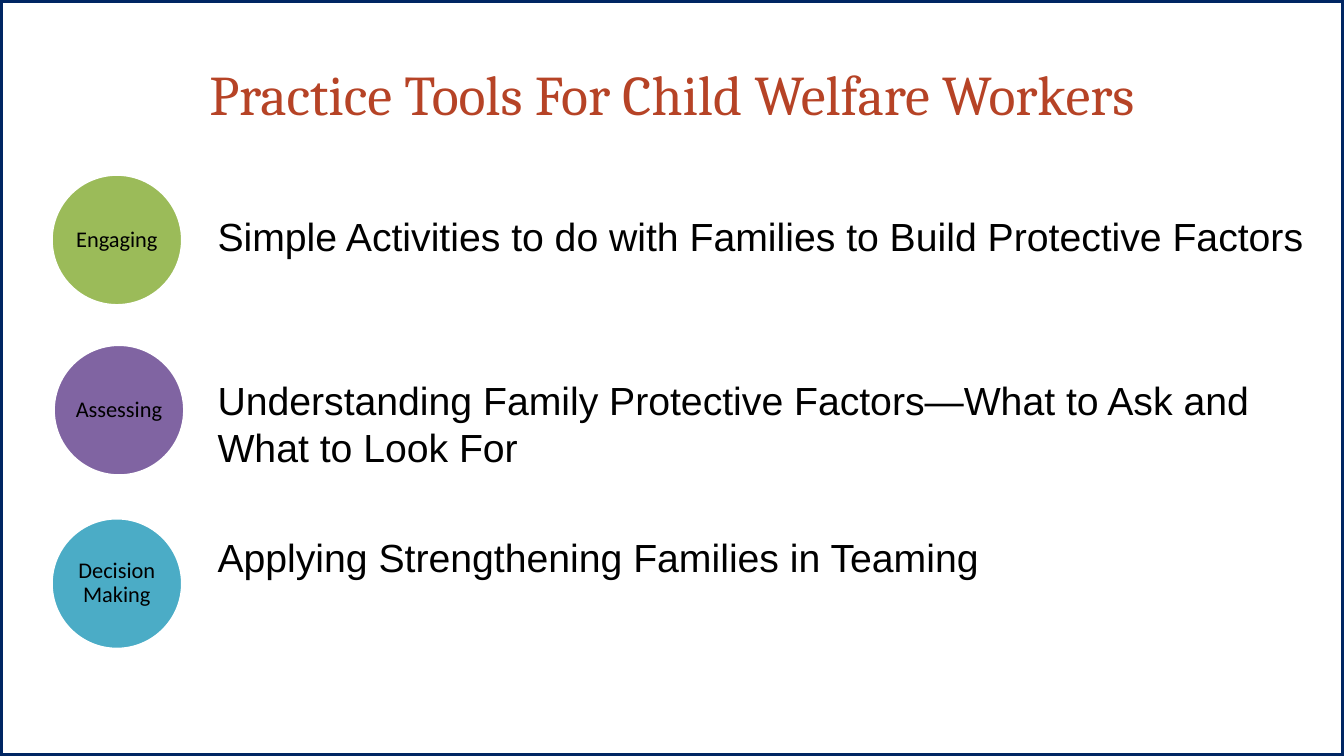
from dataclasses import dataclass
from pptx import Presentation
from pptx.util import Pt
from pptx.dml.color import RGBColor
from pptx.enum.shapes import MSO_SHAPE
from pptx.enum.text import MSO_ANCHOR, PP_ALIGN

RECT, OVAL = MSO_SHAPE.RECTANGLE, MSO_SHAPE.OVAL
TOP, MIDDLE = MSO_ANCHOR.TOP, MSO_ANCHOR.MIDDLE
LEFT, CENTER = PP_ALIGN.LEFT, PP_ALIGN.CENTER


@dataclass
class Theme:
    navy: str = "002663"
    rust: str = "B64326"
    ink: str = "000000"
    white: str = "FFFFFF"
    green: str = "9BBB59"
    purple: str = "8064A2"
    teal: str = "4BACC6"
    title: int = 40
    body: int = 28
    label: int = 16


theme = Theme()
WIDE, HIGH = 960, 540


def write(shape, text, font, size, color=theme.ink, align=LEFT, anchor=TOP,
          inset=(7.2, 3.6), space=1.0):
    frame = shape.text_frame
    frame.word_wrap = True
    frame.vertical_anchor = anchor
    frame.margin_left = frame.margin_right = Pt(inset[0])
    frame.margin_top = frame.margin_bottom = Pt(inset[1])
    para = frame.paragraphs[0]
    para.text = text
    para.alignment = align
    para.line_spacing = space
    para.font.name = font
    para.font.size = Pt(size)
    para.font.color.rgb = RGBColor.from_string(color)


deck = Presentation()
deck.slide_width, deck.slide_height = Pt(WIDE), Pt(HIGH)
slide = deck.slides.add_slide(deck.slide_layouts[6])
shapes = slide.shapes

border = shapes.add_shape(RECT, 0, 0, Pt(WIDE), Pt(HIGH))
border.shadow.inherit = False
border.fill.background()
border.line.color.rgb = RGBColor.from_string(theme.navy)
border.line.width = Pt(4.5)

title = shapes.add_textbox(Pt(48), Pt(21.6), Pt(864), Pt(90))
write(title, "Practice Tools For Child Welfare Workers", font="Cambria",
      size=theme.title, color=theme.rust, align=CENTER, anchor=MIDDLE)

disc = 93.6
rows = [
    ("Engaging", theme.green, 36.7, 124.6, 148,
     "Simple Activities to do with Families to Build Protective Factors"),
    ("Assessing", theme.purple, 38.2, 246.2, 265.5,
     "Understanding Family Protective Factors—What to Ask and What to Look For"),
    ("Decision Making", theme.teal, 36.7, 370.1, 377.5,
     "Applying Strengthening Families in Teaming"),
]
for label, color, left, top, line, text in rows:
    circle = shapes.add_shape(OVAL, Pt(left), Pt(top), Pt(disc), Pt(disc))
    circle.shadow.inherit = False
    circle.fill.solid()
    circle.fill.fore_color.rgb = RGBColor.from_string(color)
    circle.line.color.rgb = RGBColor.from_string(theme.white)
    circle.line.width = Pt(2)
    write(circle, label, font="Calibri", size=theme.label, align=CENTER,
          anchor=MIDDLE, inset=(1.4, 1.4), space=0.9)
    tool = shapes.add_textbox(Pt(148.3), Pt(line), Pt(797.8), Pt(76))
    write(tool, text, font="Arial", size=theme.body)

deck.save("out.pptx")
